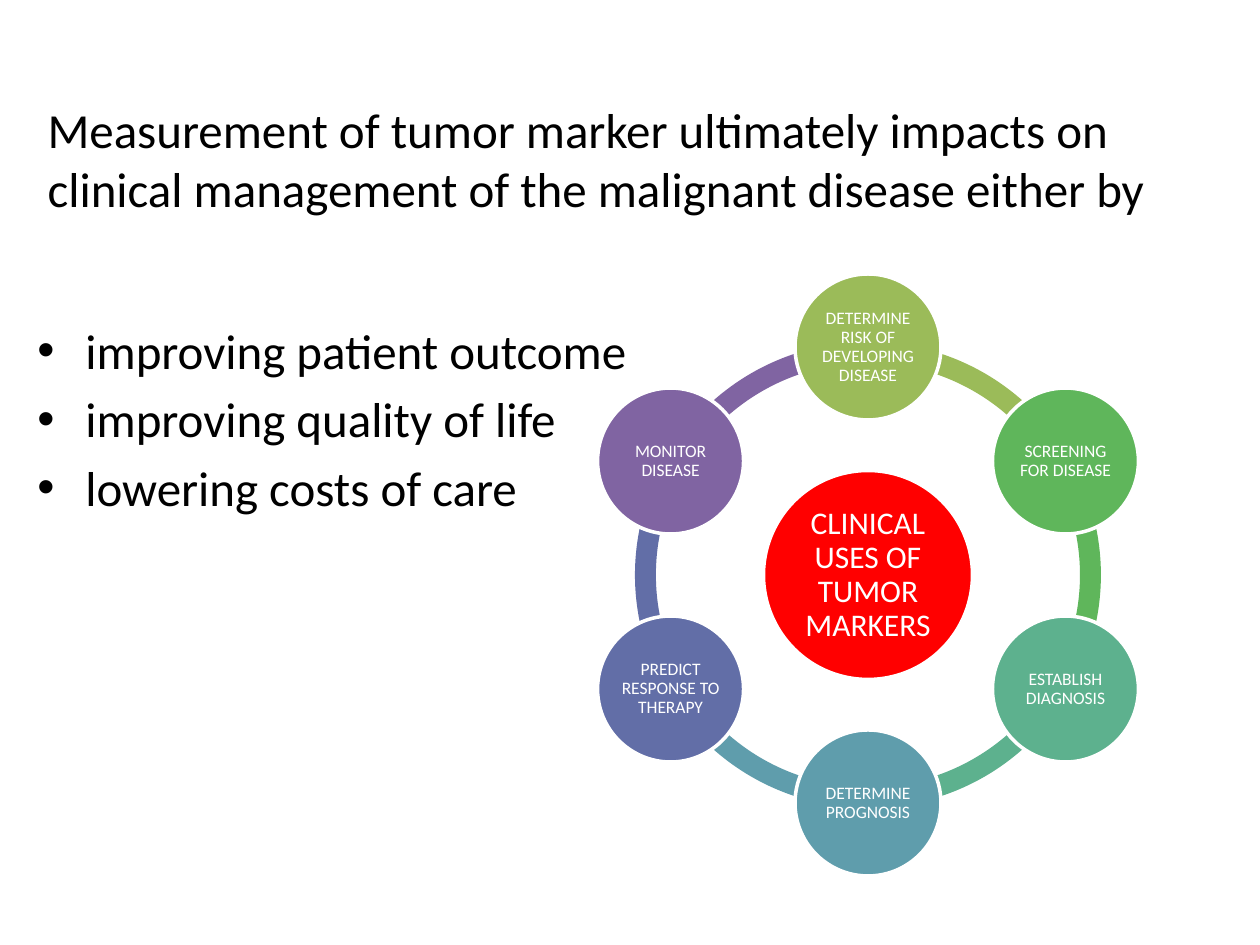
from math import cos, radians, sin

from lxml import etree
from pptx import Presentation
from pptx import util as u
from pptx.dml.color import RGBColor
from pptx.enum import shapes, text
from pptx.oxml.ns import qn

# Content
TITLE = ("Measurement of tumor marker ultimately impacts on "
         "clinical management of the malignant disease either by")
GOALS = ["improving patient outcome", "improving quality of life",
         "lowering costs of care"]
HUB = "CLINICAL USES OF TUMOR MARKERS"
USES = [  # clockwise from the top
    ("DETERMINE RISK OF DEVELOPING DISEASE", "lime"),
    ("SCREENING FOR DISEASE", "green"),
    ("ESTABLISH DIAGNOSIS", "mint"),
    ("DETERMINE PROGNOSIS", "teal"),
    ("PREDICT RESPONSE TO THERAPY", "blue"),
    ("MONITOR DISEASE", "purple"),
]
COLORS = {"lime": "9BBB59", "green": "5FB65B", "mint": "5DB18E",
          "teal": "5F9DAC", "blue": "626EA7", "purple": "8064A2",
          "red": "FF0000", "white": "FFFFFF", "black": "000000"}
FONT = "Calibri"

# Measures in px
MID_X, MID_Y = 868, 575
ORBIT, RING, NODE, CORE = 228, 466, 146, 209
INDENT = 48


def px(n):
    return u.Emu(round(n * 914400 / 126))


def rgb(name):
    return RGBColor.from_string(COLORS[name])


def style(par, size, color):
    for run in par.runs:
        run.font.name = FONT
        run.font.size = u.Pt(size)
        run.font.color.rgb = rgb(color)


def add(kind, x, y, size, color):
    """Add a square-framed shape centred on x, y."""
    shape = slide.shapes.add_shape(
        kind, px(x - size / 2), px(y - size / 2), px(size), px(size))
    shape.shadow.inherit = False
    shape.fill.solid()
    shape.fill.fore_color.rgb = rgb(color)
    shape.line.fill.background()
    return shape


def disc(x, y, size, color, label, pt, inset):
    shape = add(shapes.MSO_SHAPE.OVAL, x, y, size, color)
    shape.line.color.rgb = rgb("white")
    shape.line.width = u.Pt(2)
    frame = shape.text_frame
    frame.text = label
    frame.word_wrap = True
    frame.vertical_anchor = text.MSO_ANCHOR.MIDDLE
    frame.margin_left = frame.margin_right = px(inset)
    frame.margin_top = frame.margin_bottom = px(inset)
    par = frame.paragraphs[0]
    par.alignment = text.PP_ALIGN.CENTER
    par.line_spacing = 0.9
    style(par, pt, "white")


prs = Presentation()
prs.slide_width, prs.slide_height = px(1260), px(945)
slide = prs.slides.add_slide(prs.slide_layouts[5])

# Title
head = slide.shapes.title
head.left, head.top, head.width, head.height = map(px, (35, 86, 1181, 145))
head.text_frame.text = TITLE
head.text_frame.auto_size = text.MSO_AUTO_SIZE.NONE
head.text_frame.vertical_anchor = text.MSO_ANCHOR.MIDDLE
head.text_frame.paragraphs[0].alignment = text.PP_ALIGN.LEFT
style(head.text_frame.paragraphs[0], 28, "black")

# Ring of arcs, each running from one use to the next
step = 360 / len(USES)
for i, (label, color) in enumerate(USES):
    start = (270 + i * step) % 360
    arc = add(shapes.MSO_SHAPE.BLOCK_ARC, MID_X, MID_Y, RING, color)
    # Angles are stored in 60000ths of a degree, adjustments in 100000ths
    arc.adjustments[0] = start * 0.6
    arc.adjustments[1] = (start + step) % 360 * 0.6
    arc.adjustments[2] = 0.045

# Hub and uses
disc(MID_X, MID_Y, CORE, "red", HUB, 18, 4)
for i, (label, color) in enumerate(USES):
    turn = radians(i * step - 90)
    disc(MID_X + ORBIT * cos(turn), MID_Y + ORBIT * sin(turn),
         NODE, color, label, 10, 1)

# Bulleted goals
box = slide.shapes.add_textbox(*map(px, (25, 314, 898, 509))).text_frame
box.word_wrap = True
box.text = "\n".join(GOALS)
for par in box.paragraphs:
    par.space_before = u.Pt(5.6)
    style(par, 28, "black")
    prop = par._p.get_or_add_pPr()
    prop.set("marL", str(px(INDENT)))
    prop.set("indent", str(-px(INDENT)))
    etree.SubElement(prop, qn("a:buFont"), typeface="Arial")
    etree.SubElement(prop, qn("a:buChar"), char="•")

prs.save("out.pptx")
